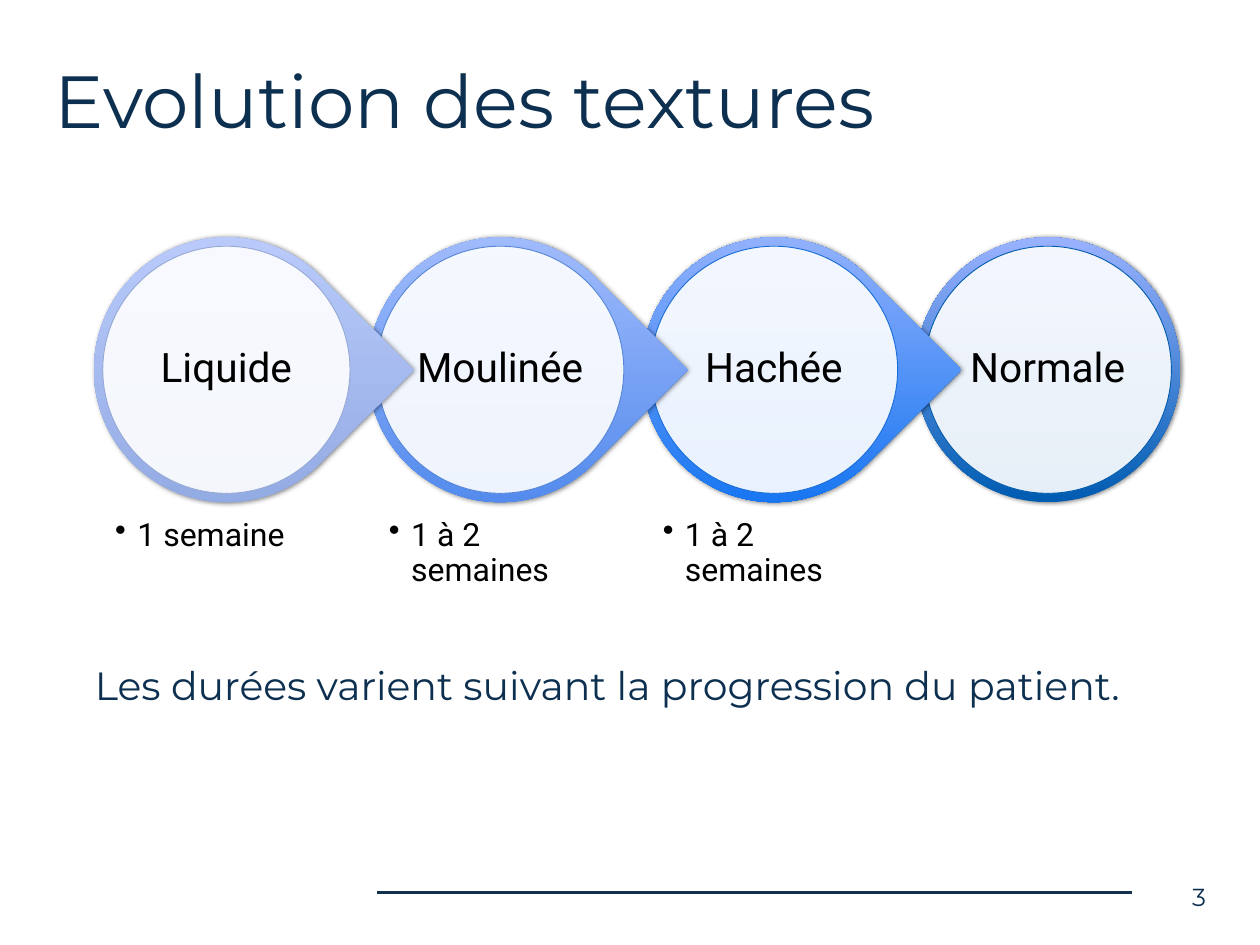
from dataclasses import dataclass

from lxml.etree import SubElement
from pptx import Presentation
from pptx.dml.color import RGBColor
from pptx.enum.shapes import MSO_CONNECTOR, MSO_SHAPE
from pptx.enum.text import MSO_ANCHOR, MSO_AUTO_SIZE, PP_ALIGN
from pptx.oxml.ns import qn
from pptx.slide import Slide
from pptx.util import Inches, Pt

# Name, duration, ring colour at the bottom, ring colour at the top, disc line
STAGES = [
    ("Liquide", "1 semaine", "8CA5DF", "C0D0FF", "96A9D5"),
    ("Moulinée", "1 à 2 semaines", "4481EA", "B0C5FF", "5786D7"),
    ("Hachée", "1 à 2 semaines", "006AEF", "AABDFF", "196DD6"),
    ("Normale", None, "005CB1", "99B2FF", "035CAE"),
]
LEFT, TOP, STEP = 1.06, 2.68, 3.09
RING, DISC = 2.99, 2.79
RIM = (RING - DISC) / 2


def color(code):
    return RGBColor.from_string(code)


def place(shape, left, top, width, height):
    shape.left, shape.top = Inches(left), Inches(top)
    shape.width, shape.height = Inches(width), Inches(height)


def write(shape, text, *, size, font, ink, align=PP_ALIGN.LEFT,
          anchor=MSO_ANCHOR.TOP, inset=0, bottom=None, lines=1, hang=0,
          bullet=None):
    """Fill a shape with one formatted paragraph; inset and hang in inches."""
    frame = shape.text_frame
    frame.word_wrap = True
    frame.auto_size = MSO_AUTO_SIZE.NONE
    frame.vertical_anchor = anchor
    frame.margin_left = frame.margin_right = frame.margin_top = Inches(inset)
    frame.margin_bottom = Inches(inset if bottom is None else bottom)
    para = frame.paragraphs[0]
    para.alignment = align
    para.line_spacing = lines
    para.space_before = Pt(0)
    props = para._p.get_or_add_pPr()
    props.set("marL", str(Inches(hang)))
    props.set("indent", str(-Inches(hang)))
    if bullet:
        SubElement(props, qn("a:buChar")).set("char", bullet)
    else:
        SubElement(props, qn("a:buNone"))
    run = para.add_run()
    run.text = text
    run.font.size = Pt(size)
    run.font.name = font
    run.font.color.rgb = color(ink)


@dataclass
class Deck:
    slide: Slide
    head: str = "Montserrat"
    body: str = "Roboto"
    navy: str = "0D3050"
    black: str = "000000"

    def title(self, text):
        shape = self.slide.shapes.title
        place(shape, 0.56, 0.54, 13.11, 1.15)
        write(shape, text, size=60, font=self.head, ink=self.navy,
              anchor=MSO_ANCHOR.MIDDLE, inset=0.06)

    def remark(self, text):
        shape = self.slide.placeholders[1]
        place(shape, 0.56, 2.05, 13.12, 6.95)
        write(shape, text, size=32, font=self.head, ink=self.navy,
              anchor=MSO_ANCHOR.BOTTOM, inset=0.51, bottom=1)

    def footer(self, number):
        line = self.slide.shapes.add_connector(
            MSO_CONNECTOR.STRAIGHT, Inches(4.26), Inches(10.08),
            Inches(12.78), Inches(10.08))
        line.line.color.rgb = color("11314F")
        line.line.width = Pt(2)
        SubElement(line._element.spPr, qn("a:effectLst"))
        self.note(number, 13.09, 9.9, 0.58, 0.45, size=20, font=self.head,
                  ink=self.navy, align=PP_ALIGN.RIGHT, inset=0.06)

    def note(self, text, left, top, width, height, **style):
        box = self.slide.shapes.add_textbox(
            Inches(left), Inches(top), Inches(width), Inches(height))
        write(box, text, **style)

    def round(self, kind, left, top, size):
        shape = self.slide.shapes.add_shape(
            kind, Inches(left), Inches(top), Inches(size), Inches(size))
        shape.shadow.inherit = False
        return shape

    def ring(self, left, low, high, last):
        """Shaded ring whose point leads to the next stage, if there is one."""
        kind = MSO_SHAPE.OVAL if last else MSO_SHAPE.TEAR
        shape = self.round(kind, left, TOP, RING)
        shape.rotation = 0 if last else 45
        shape.line.fill.background()
        shape.fill.gradient()
        shape.fill.gradient_angle = 90
        for stop, code in zip(shape.fill.gradient_stops, (low, high)):
            stop.color.rgb = color(code)
        props = shape._element.spPr
        props.find(qn("a:gradFill")).set("rotWithShape", "0")
        shade = SubElement(props.find(qn("a:effectLst")), qn("a:outerShdw"))
        shade.set("blurRad", str(Pt(4)))
        shade.set("dist", str(Pt(1)))
        shade.set("dir", "0")
        shade.set("rotWithShape", "0")
        tint = SubElement(shade, qn("a:srgbClr"))
        tint.set("val", self.black)
        SubElement(tint, qn("a:alpha")).set("val", "50000")

    def disc(self, left, text, edge):
        shape = self.round(MSO_SHAPE.OVAL, left + RIM, TOP + RIM, DISC)
        shape.fill.solid()
        shape.fill.fore_color.rgb = color("FFFFFF")
        tint = shape._element.spPr.find(".//" + qn("a:srgbClr"))
        SubElement(tint, qn("a:alpha")).set("val", "90000")
        shape.line.color.rgb = color(edge)
        shape.line.width = Pt(0.75)
        write(shape, text, size=33, font=self.body, ink=self.black,
              align=PP_ALIGN.CENTER, anchor=MSO_ANCHOR.MIDDLE, lines=0.9)

    def stage(self, index, name, time, low, high, edge):
        left = LEFT + index * STEP
        self.ring(left, low, high, last=index == len(STAGES) - 1)
        self.disc(left, name, edge)
        if time:
            self.note(time, left + RIM, 5.72, DISC, 1.64, size=26,
                      font=self.body, ink=self.black, inset=0.14, lines=0.9,
                      hang=0.25, bullet="•")


def main():
    show = Presentation()
    show.slide_width, show.slide_height = Inches(14.22), Inches(10.67)
    deck = Deck(show.slides.add_slide(show.slide_layouts[1]))
    deck.title("Evolution des textures")
    deck.remark("Les durées varient suivant la progression du patient.")
    deck.footer("3")
    # Right to left, so that each point lies over the next ring
    for index, stage in reversed(list(enumerate(STAGES))):
        deck.stage(index, *stage)
    show.save("out.pptx")


if __name__ == "__main__":
    main()
